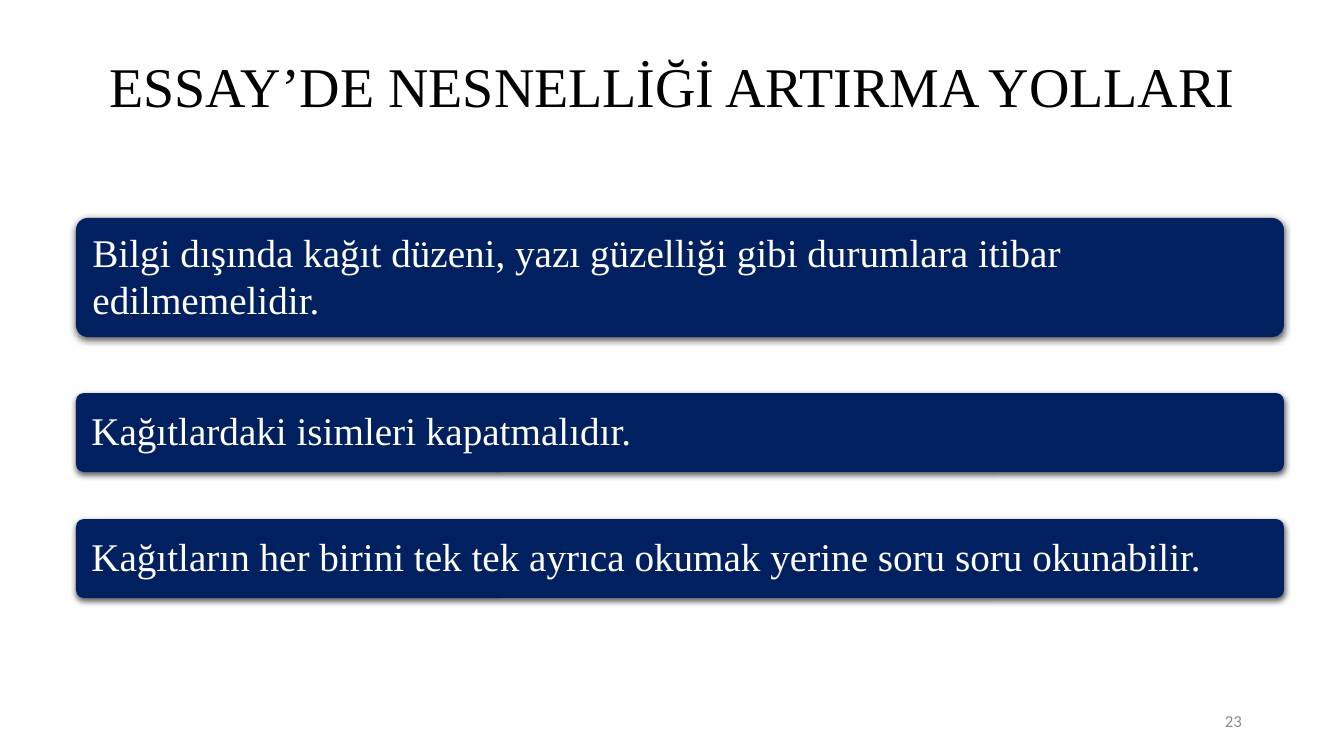
from lxml.etree import SubElement
from pptx import Presentation
from pptx.dml.color import RGBColor
from pptx.enum.shapes import MSO_SHAPE as Shape
from pptx.enum.text import MSO_ANCHOR as Anchor, MSO_AUTO_SIZE as AutoSize, PP_ALIGN as Align
from pptx.oxml.ns import qn
from pptx.util import Inches, Pt

NAVY = RGBColor(0x00, 0x20, 0x60)
WHITE = RGBColor(0xFF, 0xFF, 0xFF)
BLACK = RGBColor(0x00, 0x00, 0x00)
GRAY = RGBColor(0x8C, 0x8C, 0x8C)
SERIF = "Times New Roman"
SANS = "Calibri"
PX_PER_INCH = 100.8


def px(length):
    return Inches(length / PX_PER_INCH)


def write(frame, text, *, size, color, font=SERIF, align=Align.LEFT, spacing=None):
    frame.word_wrap = True
    frame.auto_size = AutoSize.NONE
    frame.vertical_anchor = Anchor.MIDDLE
    paragraph = frame.paragraphs[0]
    paragraph.text = text
    paragraph.alignment = align
    paragraph.line_spacing = spacing
    paragraph.font.name = font
    paragraph.font.size = Pt(size)
    paragraph.font.color.rgb = color


class SlideBuilder:
    box_left = 76
    box_width = 1208

    def __init__(self, slide):
        self.slide = slide

    def title(self, text):
        shape = self.slide.shapes.title
        shape.left, shape.top, shape.width, shape.height = map(px, (53, 39, 1238, 100))
        write(shape.text_frame, text, size=40, color=BLACK, align=Align.CENTER, spacing=0.9)

    def page_number(self, text):
        shape = self.slide.shapes.add_textbox(px(950), px(701), px(302), px(40))
        write(shape.text_frame, text, size=12, color=GRAY, font=SANS, align=Align.RIGHT)

    def box(self, text, top, height, spacing=0.9, bottom=7):
        shape = self.slide.shapes.add_shape(
            Shape.ROUNDED_RECTANGLE, px(self.box_left), px(top), px(self.box_width), px(height))
        shape.adjustments[0] = 0.1
        shape.fill.solid()
        shape.fill.fore_color.rgb = NAVY
        shape.line.fill.background()
        self.soft_shadow(shape)
        frame = shape.text_frame
        frame.margin_left = frame.margin_right = px(13)
        frame.margin_top, frame.margin_bottom = px(7), px(bottom)
        write(frame, text, size=28, color=WHITE, spacing=spacing)

    def soft_shadow(self, shape):
        shape.shadow.inherit = False
        effects = shape.element.spPr.find(qn("a:effectLst"))
        shadow = SubElement(effects, qn("a:outerShdw"), blurRad=str(Pt(4.5)),
                            dist=str(Pt(1.5)), dir="5400000", algn="ctr", rotWithShape="0")
        color = SubElement(shadow, qn("a:srgbClr"), val=str(BLACK))
        SubElement(color, qn("a:alpha"), val="63000")


def main():
    presentation = Presentation()
    presentation.slide_width = px(1344)
    presentation.slide_height = px(756)
    title_only = presentation.slide_layouts[5]
    builder = SlideBuilder(presentation.slides.add_slide(title_only))
    builder.title("ESSAY’DE NESNELLİĞİ ARTIRMA YOLLARI")
    builder.page_number("23")
    builder.box("Bilgi dışında kağıt düzeni, yazı güzelliği gibi durumlara itibar edilmemelidir.",
                218, 119, spacing=1.0, bottom=12)
    builder.box("Kağıtlardaki isimleri kapatmalıdır.", 393, 79)
    builder.box("Kağıtların her birini tek tek ayrıca okumak yerine soru soru okunabilir.", 519, 79)
    presentation.save("out.pptx")


if __name__ == "__main__":
    main()
